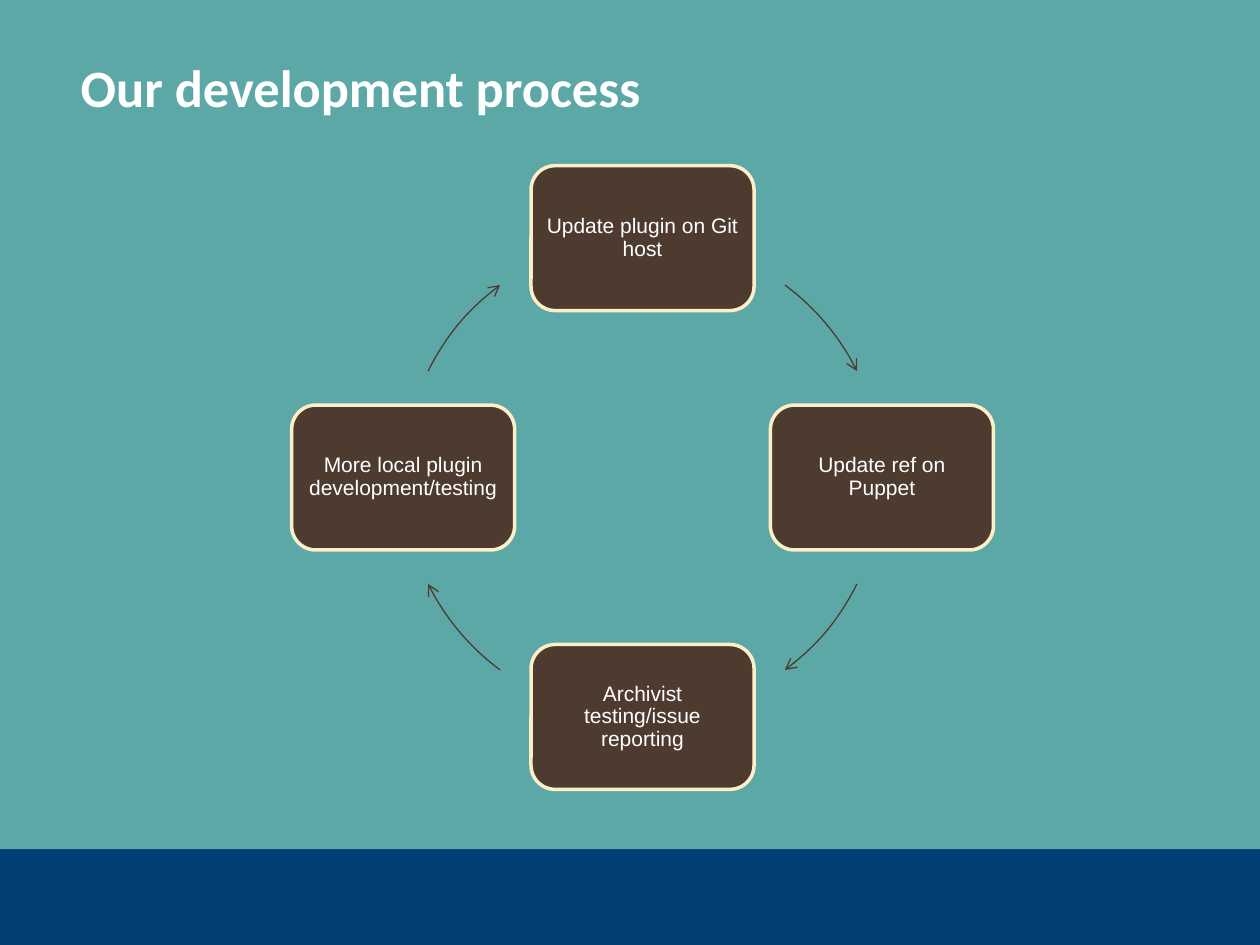
from lxml.etree import SubElement
from pptx import Presentation
from pptx.dml.color import RGBColor
from pptx.enum.shapes import MSO_SHAPE
from pptx.enum.text import MSO_ANCHOR, PP_ALIGN
from pptx.oxml.ns import qn
from pptx.util import Inches, Pt


def color(hex_string):
    return RGBColor.from_string(hex_string)


BROWN, CREAM, WHITE = "4E3B30", "FBEEC9", "FFFFFF"

presentation = Presentation()
presentation.slide_width = Inches(10)
presentation.slide_height = Inches(7.5)
slide = presentation.slides.add_slide(presentation.slide_layouts[5])
slide.background.fill.solid()
slide.background.fill.fore_color.rgb = color("ECECEC")

# Backdrop bands, placed behind the title
title = slide.shapes.title
for top, height, fill in [(6.74, 0.76, "003E74"), (0, 6.74, "5CA8A6")]:
    band = slide.shapes.add_shape(
        MSO_SHAPE.RECTANGLE, 0, Inches(top), Inches(10), Inches(height))
    band.shadow.inherit = False
    band.fill.solid()
    band.fill.fore_color.rgb = color(fill)
    band.line.fill.background()
    title.element.addprevious(band.element)

title.left, title.top = Inches(0.64), Inches(0.44)
title.width, title.height = Inches(8.92), Inches(0.46)
frame = title.text_frame
frame.text = "Our development process"
frame.word_wrap = True
frame.vertical_anchor = MSO_ANCHOR.TOP
frame.margin_left = frame.margin_right = frame.margin_top = frame.margin_bottom = 0
paragraph = frame.paragraphs[0]
paragraph.alignment = PP_ALIGN.LEFT
paragraph.font.name = "Calibri"
paragraph.font.size = Pt(30)
paragraph.font.bold = True
paragraph.font.color.rgb = color(WHITE)

# Cycle: four steps clockwise from the top, each followed by an arc
CENTER_X, CENTER_Y, RADIUS = 5.1, 3.79, 1.9
STEP_WIDTH, STEP_HEIGHT = 1.77, 1.15
steps = [
    ("Update plugin on Git host", 0, -1, 306.5),
    ("Update ref on Puppet", 1, 0, 26.4),
    ("Archivist testing/issue reporting", 0, 1, 126.5),
    ("More local plugin development/testing", -1, 0, 206.4),
]
ARC_SWEEP = 27.1
ADJUSTMENT_PER_DEGREE = 0.6  # 60000 angle units per degree, scaled by 100000

for text, across, down, arc_start in steps:
    step = slide.shapes.add_shape(
        MSO_SHAPE.ROUNDED_RECTANGLE,
        Inches(CENTER_X + across * RADIUS - STEP_WIDTH / 2),
        Inches(CENTER_Y + down * RADIUS - STEP_HEIGHT / 2),
        Inches(STEP_WIDTH), Inches(STEP_HEIGHT))
    step.shadow.inherit = False
    step.fill.solid()
    step.fill.fore_color.rgb = color(BROWN)
    step.line.color.rgb = color(CREAM)
    step.line.width = Pt(2)
    frame = step.text_frame
    frame.text = text
    frame.word_wrap = True
    frame.vertical_anchor = MSO_ANCHOR.MIDDLE
    frame.margin_left = frame.margin_right = Inches(0.05)
    frame.margin_top = frame.margin_bottom = Inches(0.05)
    paragraph = frame.paragraphs[0]
    paragraph.alignment = PP_ALIGN.CENTER
    paragraph.line_spacing = 0.9
    paragraph.font.name = "Arial"
    paragraph.font.size = Pt(12)
    paragraph.font.color.rgb = color(WHITE)

    arc = slide.shapes.add_shape(
        MSO_SHAPE.ARC, Inches(CENTER_X - RADIUS), Inches(CENTER_Y - RADIUS),
        Inches(2 * RADIUS), Inches(2 * RADIUS))
    arc.shadow.inherit = False
    arc.adjustments[0] = arc_start * ADJUSTMENT_PER_DEGREE
    arc.adjustments[1] = (arc_start + ARC_SWEEP) * ADJUSTMENT_PER_DEGREE
    arc.fill.background()
    arc.line.color.rgb = color(BROWN)
    arc.line.width = Pt(0.75)
    SubElement(arc.element.spPr.find(qn("a:ln")), qn("a:tailEnd"), type="arrow")

presentation.save("out.pptx")
